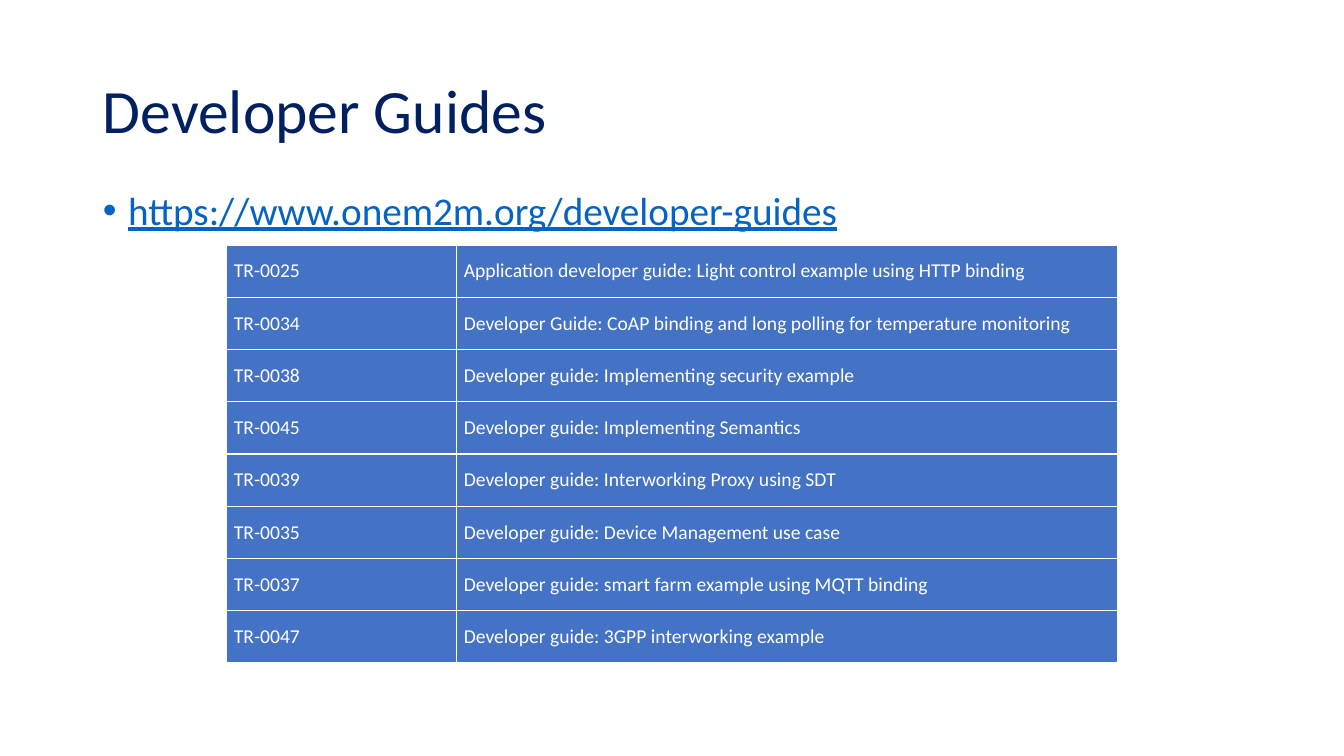
from lxml import etree
from pptx import Presentation
from pptx.dml.color import RGBColor
from pptx.enum import text
from pptx.oxml import ns
from pptx.util import Inches, Pt

NAVY = RGBColor(0x00, 0x20, 0x60)
LINK = RGBColor(0x05, 0x63, 0xC1)
BLUE = RGBColor(0x44, 0x72, 0xC4)
WHITE = RGBColor(0xFF, 0xFF, 0xFF)

GUIDES = [
    ("TR-0025", "Application developer guide: Light control example using HTTP binding"),
    ("TR-0034", "Developer Guide: CoAP binding and long polling for temperature monitoring"),
    ("TR-0038", "Developer guide: Implementing security example"),
    ("TR-0045", "Developer guide: Implementing Semantics"),
    ("TR-0039", "Developer guide: Interworking Proxy using SDT"),
    ("TR-0035", "Developer guide: Device Management use case"),
    ("TR-0037", "Developer guide: smart farm example using MQTT binding"),
    ("TR-0047", "Developer guide: 3GPP interworking example"),
]


def style(para, size, color):
    for run in para.runs:
        font = run.font
        font.name = "Calibri"
        font.size = Pt(size)
        font.bold = False
        font.color.rgb = color


def place(holder, box, words, size, color, anchor):
    holder.left, holder.top, holder.width, holder.height = map(Inches, box)
    frame = holder.text_frame
    frame.text = words
    frame.word_wrap = True
    frame.auto_size = text.MSO_AUTO_SIZE.NONE
    frame.vertical_anchor = anchor
    para = frame.paragraphs[0]
    para.alignment = text.PP_ALIGN.LEFT
    para.line_spacing = 0.9
    para.space_before = Pt(0)
    style(para, size, color)
    return para


def add_title(slide, box):
    place(slide.shapes.title, box, "Developer Guides", 44, NAVY, text.MSO_ANCHOR.MIDDLE)


def add_body(slide, box):
    para = place(slide.placeholders[1], box, "https://www.onem2m.org/developer-guides",
                 28, LINK, text.MSO_ANCHOR.TOP)
    props = para._p.get_or_add_pPr()
    props.set("marL", str(Inches(0.25)))
    props.set("indent", str(-Inches(0.25)))
    etree.SubElement(props, ns.qn("a:buFont"), typeface="Arial")
    etree.SubElement(props, ns.qn("a:buChar"), char="•")
    para.runs[0].font.underline = True


def add_edges(cell):
    props = cell._tc.get_or_add_tcPr()
    for spot, side in enumerate(("lnL", "lnR", "lnT", "lnB")):
        line = etree.Element(ns.qn("a:" + side), w=str(Pt(1)))
        fill = etree.SubElement(line, ns.qn("a:solidFill"))
        etree.SubElement(fill, ns.qn("a:srgbClr"), val=str(WHITE))
        props.insert(spot, line)


def fill_cell(cell, words):
    cell.fill.solid()
    cell.fill.fore_color.rgb = BLUE
    cell.margin_left = cell.margin_right = Inches(0.07)
    cell.margin_top = cell.margin_bottom = 0
    cell.vertical_anchor = text.MSO_ANCHOR.MIDDLE
    cell.text_frame.text = words
    para = cell.text_frame.paragraphs[0]
    para.space_after = Pt(3)
    style(para, 14, WHITE)
    add_edges(cell)


def add_guides(slide, box):
    left, top, width, height = map(Inches, box)
    table = slide.shapes.add_table(len(GUIDES), 2, left, top, width, height).table
    first = Inches(2.28)
    table.columns[0].width = first
    table.columns[1].width = width - first
    for row, guide in zip(table.rows, GUIDES):
        for cell, words in zip(row.cells, guide):
            fill_cell(cell, words)


def main():
    deck = Presentation()
    deck.slide_width = Inches(13.33)
    deck.slide_height = Inches(7.5)
    slide = deck.slides.add_slide(deck.slide_layouts[1])
    add_title(slide, (0.92, 0.4, 11.5, 1.45))
    add_body(slide, (0.92, 1.85, 11.5, 4.91))
    add_guides(slide, (2.25, 2.43, 8.83, 4.15))
    deck.save("out.pptx")


if __name__ == "__main__":
    main()
